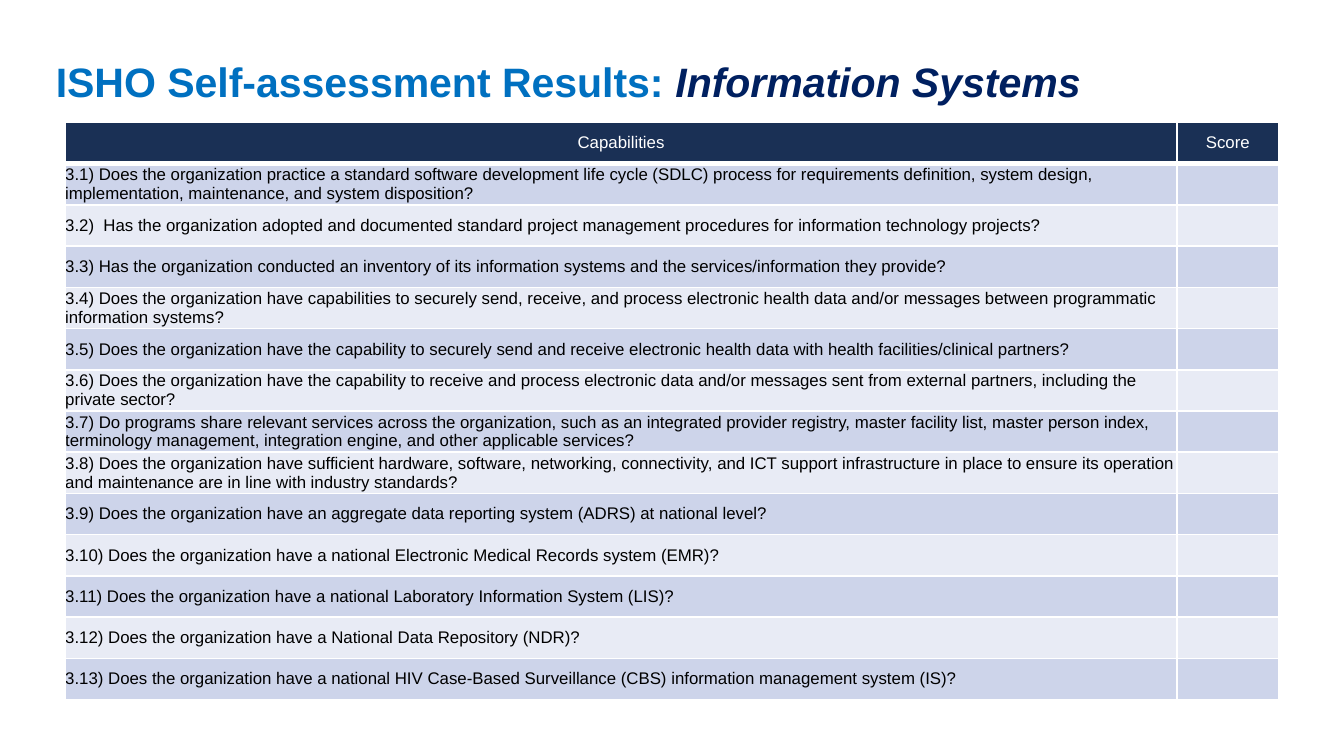
from lxml.etree import SubElement
from pptx import Presentation
from pptx.dml.color import RGBColor
from pptx.enum.text import MSO_ANCHOR, PP_ALIGN
from pptx.oxml.ns import qn
from pptx.util import Inches, Pt

# A 16:9 slide
WIDE = Inches(10)
HIGH = WIDE * 9 // 16
COLORS = {"blue": "0070C0", "navy": "002060", "head": "1A3055", "odd": "CDD4EA",
          "even": "E8EBF5", "white": "FFFFFF", "black": "000000"}
HEADS = ["Capabilities", "Score"]
ITEMS = [
    "3.1) Does the organization practice a standard software development life cycle (SDLC) process for "
    "requirements definition, system design, implementation, maintenance, and system disposition?",
    "3.2)  Has the organization adopted and documented standard project management procedures for "
    "information technology projects?",
    "3.3) Has the organization conducted an inventory of its information systems and the "
    "services/information they provide?",
    "3.4) Does the organization have capabilities to securely send, receive, and process electronic "
    "health data and/or messages between programmatic information systems?",
    "3.5) Does the organization have the capability to securely send and receive electronic health data "
    "with health facilities/clinical partners?",
    "3.6) Does the organization have the capability to receive and process electronic data and/or "
    "messages sent from external partners, including the private sector?",
    "3.7) Do programs share relevant services across the organization, such as an integrated provider "
    "registry, master facility list, master person index, terminology management, integration engine, "
    "and other applicable services?",
    "3.8) Does the organization have sufficient hardware, software, networking, connectivity, and ICT "
    "support infrastructure in place to ensure its operation and maintenance are in line with industry "
    "standards?",
    "3.9) Does the organization have an aggregate data reporting system (ADRS) at national level?",
    "3.10) Does the organization have a national Electronic Medical Records system (EMR)?",
    "3.11) Does the organization have a national Laboratory Information System (LIS)?",
    "3.12) Does the organization have a National Data Repository (NDR)?",
    "3.13) Does the organization have a national HIV Case-Based Surveillance (CBS) information "
    "management system (IS)?",
]


def share(x, y, w, h):
    """Turn percentages of the slide's size into a box."""
    return [int(part * size / 100) for part, size in zip((x, y, w, h), (WIDE, HIGH) * 2)]


def write(para, words, size=9, color="black", bold=None, italic=None, align=PP_ALIGN.LEFT):
    para.alignment = align
    run = para.add_run()
    run.text = words
    font = run.font
    font.name, font.size, font.bold, font.italic = "Arial", Pt(size), bold, italic
    font.color.rgb = RGBColor.from_string(COLORS[color])


def pad(area, side, end):
    area.margin_left = area.margin_right = Inches(side)
    area.margin_top = area.margin_bottom = Inches(end)


def edge(cell, base):
    """Draw white cell borders; base is the weight of the lower one."""
    props = cell._tc.get_or_add_tcPr()
    sides = [("a:lnL", 1), ("a:lnR", 1), ("a:lnT", 1), ("a:lnB", base)]
    for tag, weight in sides:
        line = SubElement(props, qn(tag), w=str(Pt(weight)))
        fill = SubElement(line, qn("a:solidFill"))
        SubElement(fill, qn("a:srgbClr"), val=COLORS["white"])


def style(cell, fill, base=1, side=0, end=0):
    edge(cell, base)
    cell.fill.solid()
    cell.fill.fore_color.rgb = RGBColor.from_string(COLORS[fill])
    cell.vertical_anchor = MSO_ANCHOR.MIDDLE
    pad(cell, side, end)


def title(slide, box):
    shape = slide.shapes.title
    shape.left, shape.top, shape.width, shape.height = box
    frame = shape.text_frame
    frame.word_wrap = True
    frame.vertical_anchor = MSO_ANCHOR.MIDDLE
    pad(frame, 0.07, 0.04)
    para = frame.paragraphs[0]
    write(para, "ISHO Self-assessment Results: ", size=22, color="blue", bold=True)
    write(para, "Information Systems", size=22, color="navy", bold=True, italic=True)


def scores(slide, box):
    count = len(ITEMS) + 1
    table = slide.shapes.add_table(count, len(HEADS), *box).table
    wide = int(box[2] * 0.916)
    table.columns[0].width, table.columns[1].width = wide, box[2] - wide
    for row in table.rows:
        row.height = box[3] // count

    # Header row
    for col, head in enumerate(HEADS):
        cell = table.cell(0, col)
        style(cell, "head", base=3, side=0.08, end=0.04)
        write(cell.text_frame.paragraphs[0], head, color="white", align=PP_ALIGN.CENTER)

    # Questions, with blank score cells
    for row, item in enumerate(ITEMS, 1):
        ask, mark = table.cell(row, 0), table.cell(row, 1)
        for cell in (ask, mark):
            style(cell, "odd" if row % 2 else "even")
        write(ask.text_frame.paragraphs[0], item)
        mark.text_frame.paragraphs[0].font.size = Pt(9)


def main():
    deck = Presentation()
    deck.slide_width, deck.slide_height = WIDE, HIGH
    slide = deck.slides.add_slide(deck.slide_layouts[5])
    title(slide, share(3.45, -0.7, 79.3, 22.8))
    scores(slide, share(4.85, 16.2, 90.3, 76.4))
    deck.save("out.pptx")


if __name__ == "__main__":
    main()
